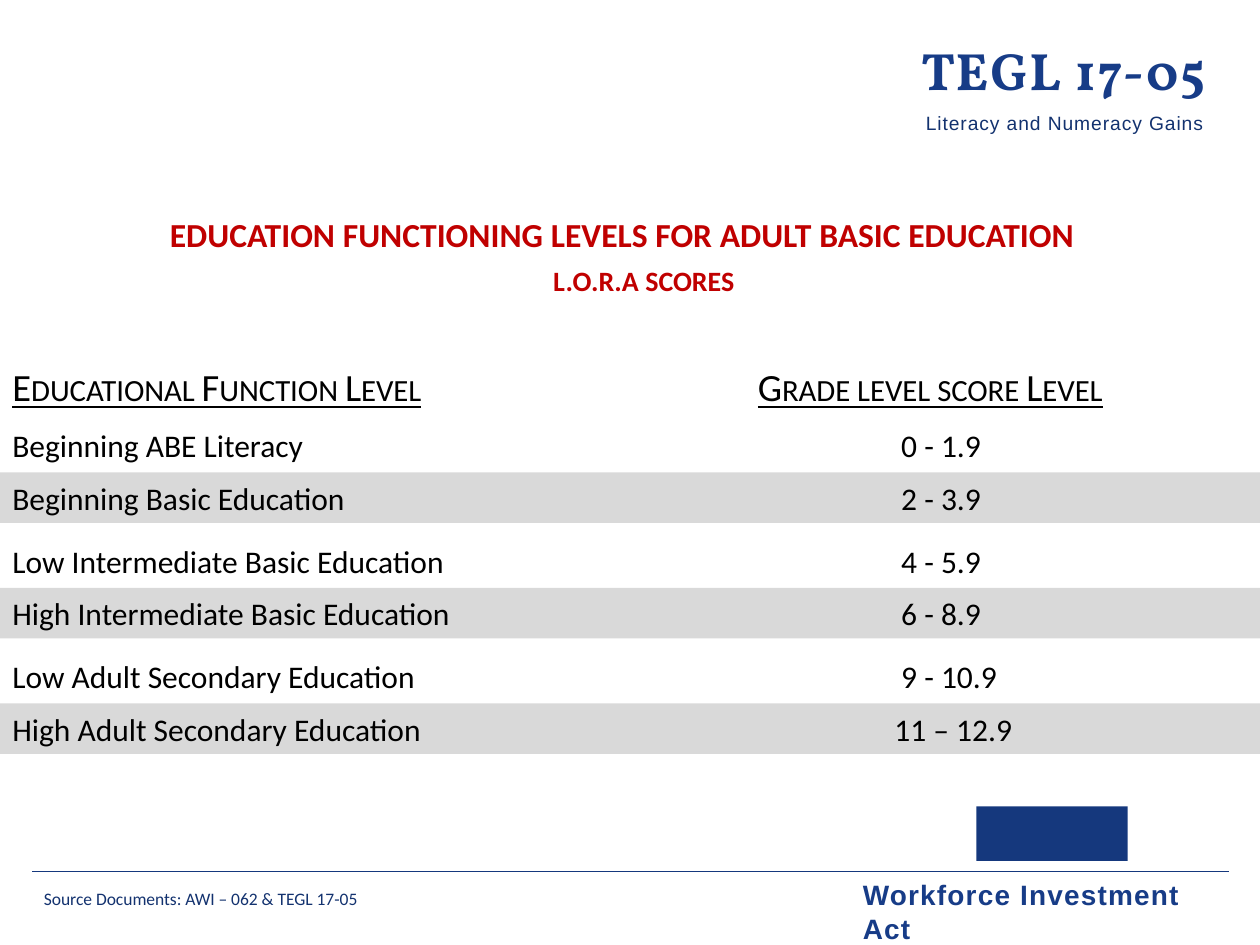
from dataclasses import dataclass

from lxml.etree import SubElement
from pptx import Presentation
from pptx.dml.color import RGBColor
from pptx.enum.shapes import MSO_CONNECTOR, MSO_SHAPE
from pptx.enum.text import MSO_ANCHOR, PP_ALIGN
from pptx.oxml import parse_xml
from pptx.oxml.ns import nsdecls, qn
from pptx.util import Inches, Pt


@dataclass(frozen=True)
class Theme:
    sans: str = "Arial"
    body: str = "Calibri"
    serif: str = "Vollkorn"
    white: str = "FFFFFF"
    black: str = "000000"
    red: str = "C00000"
    band: str = "D9D9D9"
    navy: str = "13326F"
    blue: str = "15387D"
    royal: str = "173C87"
    notice_size: int = 30
    title_size: int = 24
    column_size: int = 22
    subtitle_size: int = 20
    row_size: int = 18
    act_size: int = 16
    tagline_size: int = 11
    source_size: int = 10
    rule_width: float = 0.75


THEME = Theme()
SLIDE_WIDTH, SLIDE_HEIGHT = Inches(10), Inches(7.5)
COLUMNS, ROWS = 120, 90
LEVELS = [
    ("Beginning ABE Literacy", "0 - 1.9"),
    ("Beginning Basic Education", "2 - 3.9"),
    ("Low Intermediate Basic Education", "4 - 5.9"),
    ("High Intermediate Basic Education", "6 - 8.9"),
    ("Low Adult Secondary Education", "9 - 10.9"),
    ("High Adult Secondary Education", "11 – 12.9"),
]


def across(columns):
    return round(SLIDE_WIDTH * columns / COLUMNS)


def down(rows):
    return round(SLIDE_HEIGHT * rows / ROWS)


def place(box):
    left, top, width, height = box
    return across(left), down(top), across(width), down(height)


def style(paragraph, text, face, size, color, bold=False, underline=False,
          spacing=0, small_caps=False):
    paragraph.text = text
    paragraph.alignment = PP_ALIGN.LEFT
    font = paragraph.font
    font.name, font.size, font.bold = face, Pt(size), bold
    font.underline = underline
    font.color.rgb = RGBColor.from_string(color)
    properties = paragraph._p.pPr.find(qn("a:defRPr"))
    if spacing:
        properties.set("spc", str(round(spacing * 100)))
    if small_caps:
        properties.set("cap", "small")


def add_text(slide, box, *arguments, **options):
    shape = slide.shapes.add_textbox(*place(box))
    shape.text_frame.word_wrap = True
    style(shape.text_frame.paragraphs[0], *arguments, **options)
    return shape


def add_block(slide, box, fill):
    shape = slide.shapes.add_shape(MSO_SHAPE.RECTANGLE, *place(box))
    shape.shadow.inherit = False
    shape.fill.solid()
    shape.fill.fore_color.rgb = RGBColor.from_string(fill)
    shape.line.fill.background()
    return shape


def add_panel(slide, box, fill, *arguments, **options):
    shape = add_block(slide, box, fill)
    shape.text_frame.word_wrap = True
    shape.text_frame.vertical_anchor = MSO_ANCHOR.TOP
    style(shape.text_frame.paragraphs[0], *arguments, **options)
    return shape


def add_header(slide, box):
    left, top, width, height = box
    notice = add_panel(slide, (left, top, width - 2, 7.3), THEME.white, "TEGL 17-05",
                       THEME.serif, THEME.notice_size, THEME.royal, bold=True, spacing=1)
    notice.text_frame.paragraphs[0].alignment = PP_ALIGN.RIGHT
    notice.line.color.rgb = RGBColor.from_string(THEME.white)
    notice.line.width = Pt(THEME.rule_width)
    add_text(slide, (left + 14, top + 7, width - 14, height - 7),
             "Literacy and Numeracy Gains", THEME.sans, THEME.tagline_size,
             THEME.navy, spacing=0.5)


def add_title(slide, box):
    title = add_text(slide, box, "education functioning levels for adult basic education",
                     THEME.body, THEME.title_size, THEME.red, bold=True, small_caps=True)
    subtitle = title.text_frame.add_paragraph()
    style(subtitle, "l.o.r.a scores", THEME.body, THEME.subtitle_size, THEME.red,
          bold=True, small_caps=True)
    subtitle._p.pPr.set("marL", str(across(36.5)))
    subtitle._p.pPr.set("indent", "0")


def set_tab_stop(paragraph, position):
    tabs = parse_xml(f"<a:tabLst {nsdecls('a')}/>")
    SubElement(tabs, qn("a:tab"), pos=str(position), algn="l")
    paragraph._p.pPr.insert(0, tabs)


def add_levels(slide, box):
    left, top, width, height = box
    headings = [("Educational Function Level", 0, 46), ("Grade level score Level", 71, 41)]
    for heading, offset, heading_width in headings:
        add_text(slide, (left + offset, top, heading_width, 5.6), heading, THEME.body,
                 THEME.column_size, THEME.black, underline=True, small_caps=True)
    pair_pitch = (height - 16) / 2
    for index, (level, score) in enumerate(LEVELS):
        pair, banded = divmod(index, 2)
        row = (left, top + 6 + pair * pair_pitch + banded * 5, width, 4.8)
        content = (f"{level}\t{score}", THEME.body, THEME.row_size, THEME.black)
        if banded:
            shape = add_panel(slide, row, THEME.band, *content)
        else:
            shape = add_text(slide, row, *content)
        stop = 84 if score.startswith("11") else 84.65
        set_tab_stop(shape.text_frame.paragraphs[0], across(stop))


def add_footer(slide, box):
    left, top, width, height = box
    rule_top = top + 9
    add_block(slide, (left + 90, top + 2.8, 14.4, 5.2), THEME.blue)
    rule = slide.shapes.add_connector(MSO_CONNECTOR.STRAIGHT, across(left + width),
                                      down(rule_top), across(left), down(rule_top))
    rule.line.color.rgb = RGBColor.from_string(THEME.blue)
    rule.line.width = Pt(THEME.rule_width)
    SubElement(rule._element.spPr, qn("a:effectLst"))
    add_text(slide, (left, rule_top + 1, 51, 3.2),
             "Source Documents: AWI – 062 & TEGL 17-05", THEME.body,
             THEME.source_size, THEME.navy)
    add_text(slide, (left + 78, rule_top, 36.5, height - 9), "Workforce Investment Act",
             THEME.sans, THEME.act_size, THEME.royal, bold=True, spacing=0.7)


def main():
    presentation = Presentation()
    presentation.slide_width, presentation.slide_height = SLIDE_WIDTH, SLIDE_HEIGHT
    slide = presentation.slides.add_slide(presentation.slide_layouts[6])
    add_header(slide, (73, 3, 45, 10.5))
    add_title(slide, (15, 19, 95, 10))
    add_levels(slide, (0, 34, COLUMNS, 38))
    add_footer(slide, (3, 74, 114, 13.4))
    presentation.save("out.pptx")


if __name__ == "__main__":
    main()
